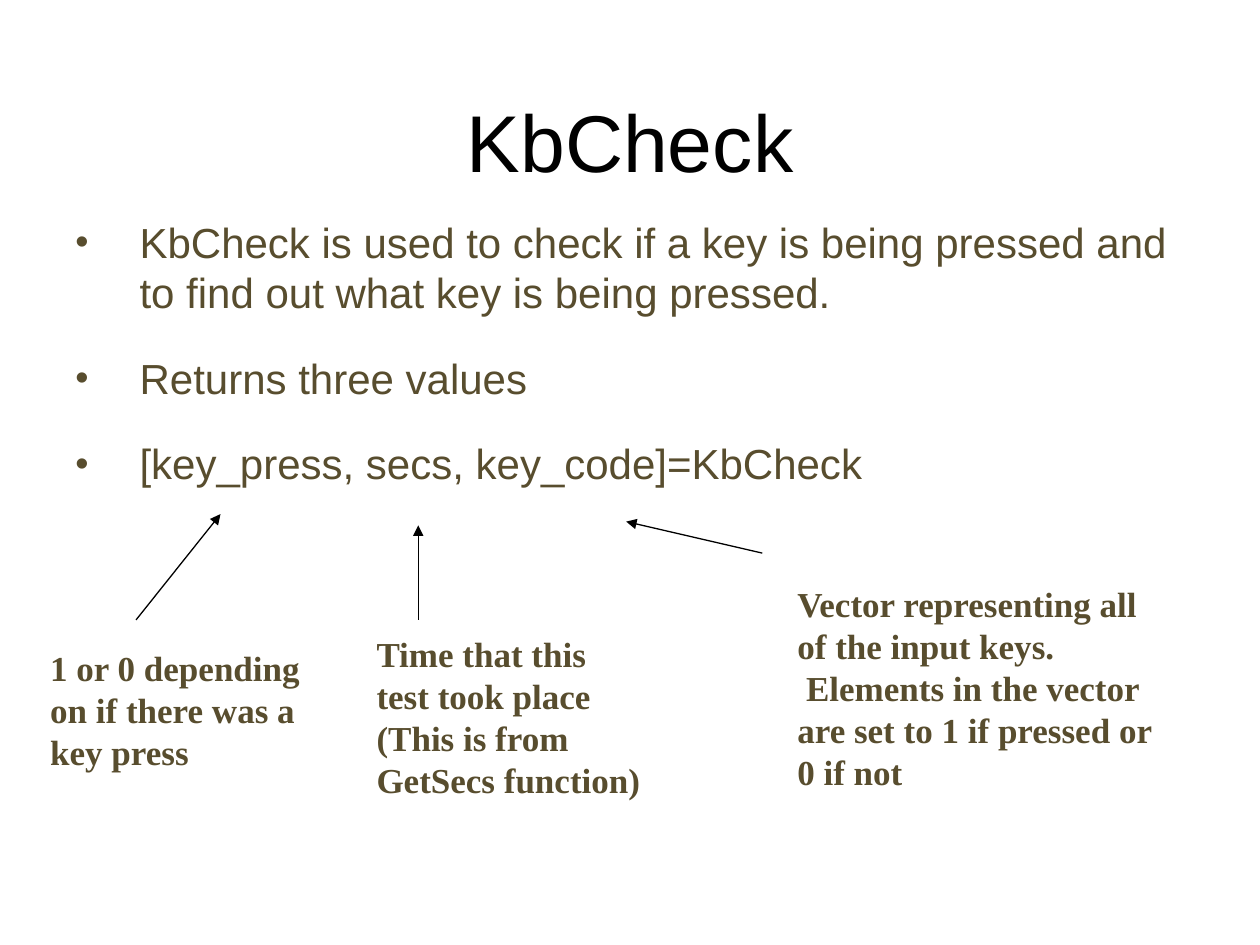
from dataclasses import dataclass

from lxml.etree import SubElement
from pptx import Presentation
from pptx.dml.color import RGBColor
from pptx.enum.shapes import MSO_CONNECTOR
from pptx.enum.text import MSO_ANCHOR, PP_ALIGN
from pptx.oxml.ns import qn
from pptx.util import Inches, Pt


@dataclass(frozen=True)
class Theme:
    black: RGBColor = RGBColor(0x00, 0x00, 0x00)
    brown: RGBColor = RGBColor(0x58, 0x4D, 0x2E)
    sans: str = "Arial"
    serif: str = "Times New Roman"
    title: int = 46
    body: int = 24
    note: int = 20
    gap: int = 20
    line: float = 0.75
    indent: float = 0.51


class Deck:
    def __init__(self, theme):
        self.theme = theme
        self.prs = Presentation()
        self.prs.slide_width, self.prs.slide_height = Inches(10), Inches(7.5)
        self.slide = self.prs.slides.add_slide(self.prs.slide_layouts[5])

    def style(self, para, size, face, color, bold=False):
        look = {"size": Pt(size), "name": face, "bold": bold}
        for run in para.runs:
            for name, value in look.items():
                setattr(run.font, name, value)
            run.font.color.rgb = color

    def title(self, text, left, top, width, height):
        shape = self.slide.shapes.title
        place = {"left": left, "top": top, "width": width, "height": height}
        for name, value in place.items():
            setattr(shape, name, Inches(value))
        frame = shape.text_frame
        frame.text = text
        frame.vertical_anchor = MSO_ANCHOR.MIDDLE
        para = frame.paragraphs[0]
        para.alignment = PP_ALIGN.CENTER
        self.style(para, self.theme.title, self.theme.sans, self.theme.black)

    def box(self, lines, *place):
        """Add a wrapping text box and return its paragraphs, one per line."""
        shape = self.slide.shapes.add_textbox(*map(Inches, place))
        frame = shape.text_frame
        frame.word_wrap = True
        frame.text = "\n".join(lines)
        return frame.paragraphs

    def bullets(self, lines, *place):
        theme = self.theme
        for index, para in enumerate(self.box(lines, *place)):
            props = para._p.get_or_add_pPr()
            props.set("marL", str(Inches(theme.indent)))
            props.set("indent", str(-Inches(theme.indent)))
            SubElement(props, qn("a:buSzPct"), val="90000")
            SubElement(props, qn("a:buFont"), typeface=theme.sans)
            SubElement(props, qn("a:buChar"), char="•")
            para.space_before = Pt(theme.gap if index else 0)
            self.style(para, theme.body, theme.sans, theme.brown)

    def note(self, lines, *place):
        theme = self.theme
        for para in self.box(lines, *place):
            self.style(para, theme.note, theme.serif, theme.brown, bold=True)

    def arrow(self, start, end):
        link = self.slide.shapes.add_connector(
            MSO_CONNECTOR.STRAIGHT, *map(Inches, start + end))
        link.line.color.rgb = self.theme.black
        link.line.width = Pt(self.theme.line)
        SubElement(link.line._get_or_add_ln(), qn("a:tailEnd"), type="triangle")
        SubElement(link._element.spPr, qn("a:effectLst"))


POINTS = [
    "KbCheck is used to check if a key is being pressed and to find out "
    "what key is being pressed.",
    "Returns three values",
    "[key_press, secs, key_code]=KbCheck",
]

# Each returned value: arrow start, arrow end, note lines, note place
VALUES = [
    ((1.08, 4.92), (1.75, 4.08),
     ["1 or 0 depending on if there was a key press"],
     (0.3, 5.08, 2.25, 1.11)),
    ((3.32, 4.92), (3.32, 4.17),
     ["Time that this",
      "test took place\v(This is from GetSecs function)"],
     (2.89, 4.97, 2.5, 1.45)),
    ((6.05, 4.39), (4.97, 4.14),
     ["Vector representing all of the input keys.\v"
      " Elements in the vector are set to 1 if pressed or 0 if not"],
     (6.23, 4.57, 3.1, 1.78)),
]


def main():
    deck = Deck(Theme())
    deck.title("KbCheck", 0.5, 0.67, 9, 0.88)
    deck.bullets(POINTS, 0.5, 1.67, 9, 4.96)
    for start, end, lines, place in VALUES:
        deck.arrow(start, end)
        deck.note(lines, *place)
    deck.prs.save("out.pptx")


if __name__ == "__main__":
    main()
